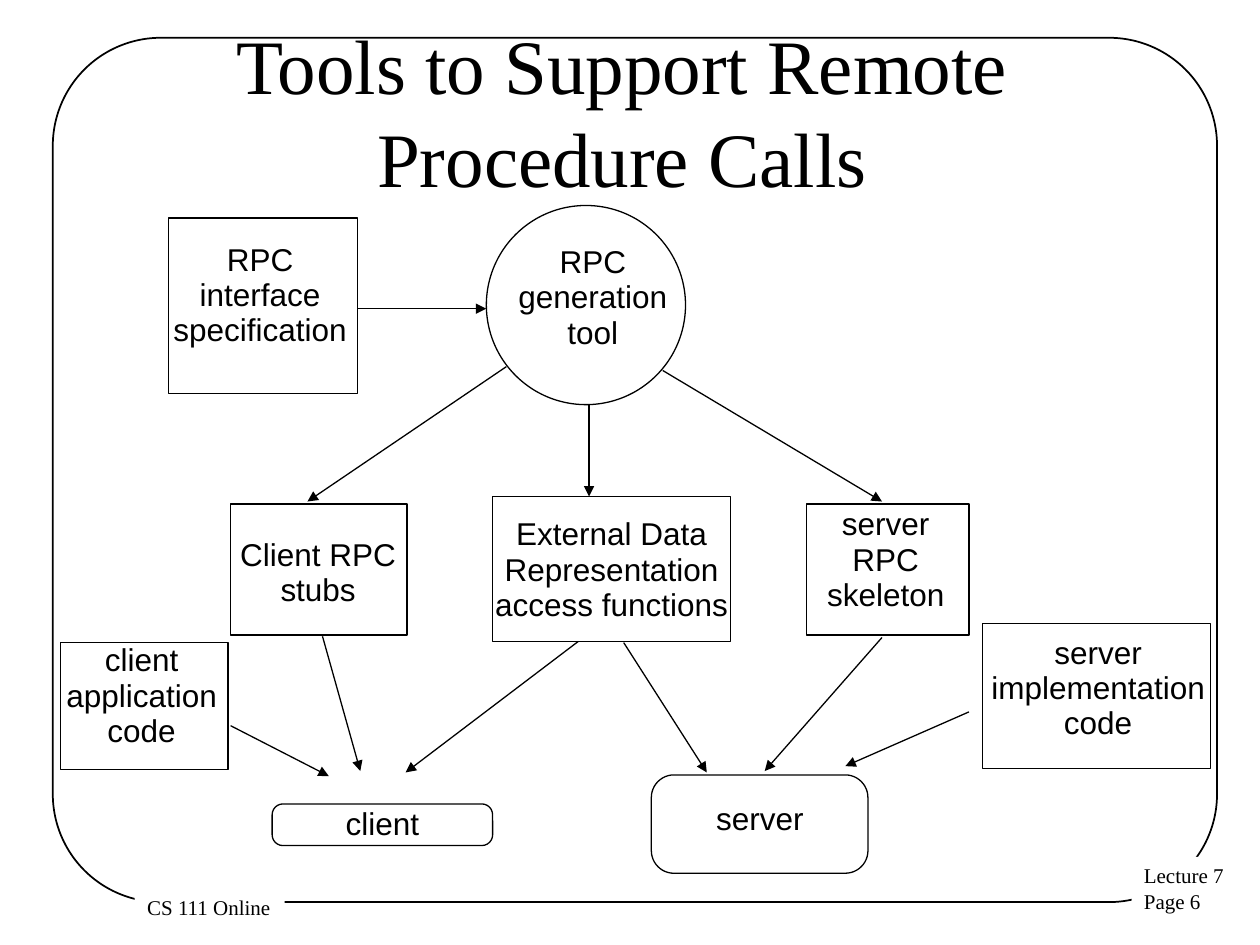
from lxml import etree
from pptx import Presentation
from pptx.dml.color import RGBColor
from pptx.enum.shapes import MSO_CONNECTOR, MSO_SHAPE
from pptx.enum.text import MSO_ANCHOR, MSO_AUTO_SIZE, PP_ALIGN
from pptx.oxml.ns import qn
from pptx.util import Pt

RECT, OVAL = MSO_SHAPE.RECTANGLE, MSO_SHAPE.OVAL
ROUND = MSO_SHAPE.ROUNDED_RECTANGLE
LEFT, MID = PP_ALIGN.LEFT, PP_ALIGN.CENTER
COLORS = {"ink": "000000", "paper": "FFFFFF"}
INK = RGBColor.from_string(COLORS["ink"])
PAPER = RGBColor.from_string(COLORS["paper"])
SERIF, SANS = "Times New Roman", "Arial"

deck = Presentation()
deck.slide_width, deck.slide_height = Pt(720), Pt(540)
slide = deck.slides.add_slide(deck.slide_layouts[5])
shapes = slide.shapes


def outline(kind, box, width=0.75, round_by=None):
    shape = shapes.add_shape(kind, *map(Pt, box))
    shape.shadow.inherit = False
    shape.fill.background()
    shape.line.color.rgb = INK
    shape.line.width = Pt(width)
    if round_by is not None:
        shape.adjustments[0] = round_by
    return shape


def write(shape, text, font, size, align, space=None):
    frame = shape.text_frame
    frame.text = text
    for para in frame.paragraphs:
        para.alignment = align
        para.line_spacing = space
        para.font.name = font
        para.font.size = Pt(size)
        para.font.color.rgb = INK
    return frame


# Page frame, with the footers set over its line
outline(ROUND, (30.2, 21.6, 665.3, 493.9), 1, 0.125)
footers = [
    ("Lecture 7\nPage 6", (646.6, 489.6, 60.5, 36.7)),
    ("CS 111 Online", (77, 507.6, 85.7, 21.6)),
]
for text, box in footers:
    note = shapes.add_textbox(*map(Pt, box))
    note.fill.solid()
    note.fill.fore_color.rgb = PAPER
    write(note, text, SERIF, 12, LEFT).word_wrap = False

# Title
title = shapes.title
title.left, title.top, title.width, title.height = map(Pt, (12.2, 18, 697.7, 90))
frame = write(title, "Tools to Support Remote \vProcedure Calls ", SERIF, 44, MID)
frame.vertical_anchor = MSO_ANCHOR.MIDDLE
frame.auto_size = MSO_AUTO_SIZE.NONE

# Nodes: kind, corner, outline box, label, label box
nodes = [
    (RECT, None, (96.5, 124.6, 108, 100.1),
     "RPC\ninterface\nspecification", (98.6, 139, 100.1, 61.2)),
    (OVAL, None, (277.9, 117.4, 113.8, 113.8),
     "RPC\ngeneration\ntool", (295.9, 140.4, 85.7, 63.4)),
    (RECT, None, (131.8, 288, 100.8, 74.9),
     "Client RPC\nstubs", (136.8, 307.4, 90, 41)),
    (RECT, None, (281.5, 283.7, 136.1, 82.8),
     "External Data\nRepresentation\naccess functions", (282.2, 295.9, 134.6, 61.2)),
    (RECT, None, (460.8, 288, 92.9, 74.9),
     "server\nRPC\nskeleton", (472.3, 290.2, 67.7, 61.2)),
    (RECT, None, (34.6, 367.2, 95.8, 72.7),
     "client\napplication\ncode", (37.4, 367.9, 87.1, 63.4)),
    (RECT, None, (561.6, 356.4, 130.3, 82.8),
     "server\nimplementation\ncode", (565.9, 363.6, 123.1, 63.4)),
    (ROUND, 0.26, (155.5, 459.4, 126, 23.8), "client", None),
    (ROUND, 0.23, (372.2, 442.8, 123.8, 56.2),
     "server", (409, 458.6, 50.4, 20.9)),
]
for kind, corner, box, text, spot in nodes:
    label = outline(kind, box, round_by=corner)
    if spot:
        label = shapes.add_textbox(*map(Pt, spot))
    frame = write(label, text, SANS, 18, MID, 0.93)
    frame.word_wrap = False
    frame.margin_left = frame.margin_right = 0
    frame.margin_top = frame.margin_bottom = 0

# Arrows: from x, y to x, y
arrows = [
    (204.5, 176.4, 277.9, 176.4),
    (289.4, 209.5, 175.7, 286.6),
    (336.6, 231.1, 336.6, 283.7),
    (378.7, 211.7, 504, 286.6),
    (131.8, 414.7, 187.9, 443.5),
    (184.3, 363.6, 205.9, 440.6),
    (330.5, 366.5, 231.8, 441.4),
    (356.4, 367.2, 403.9, 441.4),
    (504, 364.3, 437, 440.6),
    (553.7, 406.8, 483.1, 437.8),
]
for ends in arrows:
    arrow = shapes.add_connector(MSO_CONNECTOR.STRAIGHT, *map(Pt, ends))
    arrow.line.color.rgb = INK
    arrow.line.width = Pt(0.75)
    tip = etree.SubElement(arrow.line._get_or_add_ln(), qn("a:tailEnd"))
    tip.set("type", "triangle")
    etree.SubElement(arrow._element.spPr, qn("a:effectLst"))

deck.save("out.pptx")
